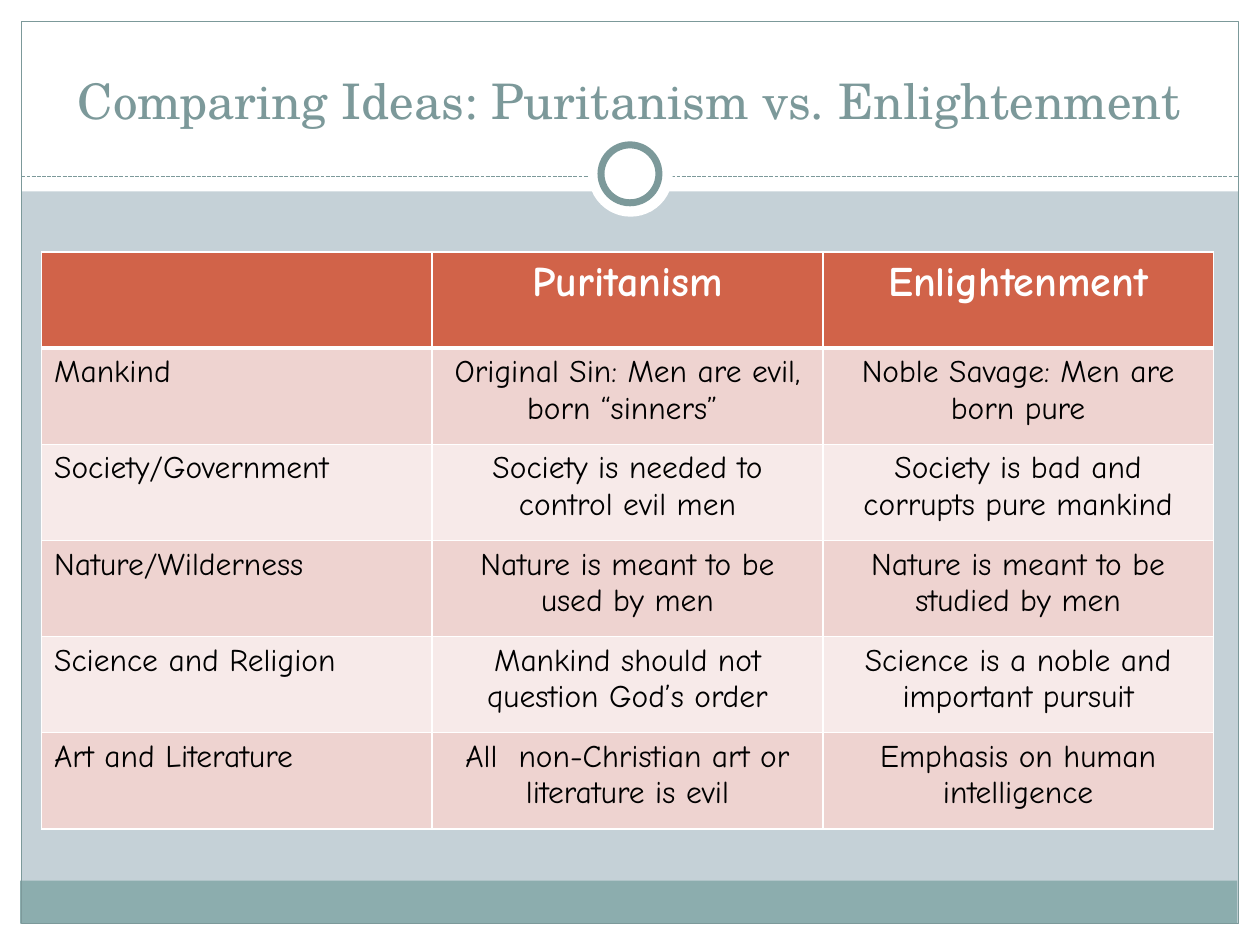
from dataclasses import dataclass

from lxml.etree import SubElement
from pptx import Presentation
from pptx.dml.color import RGBColor
from pptx.enum.dml import MSO_LINE
from pptx.enum.shapes import MSO_CONNECTOR, MSO_SHAPE
from pptx.enum.text import MSO_ANCHOR, PP_ALIGN
from pptx.oxml import parse_xml
from pptx.oxml.ns import nsdecls, qn
from pptx.util import Inches, Pt


@dataclass(frozen=True)
class Theme:
    """Colours, fonts and type sizes of the slide."""

    background: str = "C5D1D7"
    white: str = "FFFFFF"
    black: str = "000000"
    accent: str = "7C999A"
    footer: str = "8CADAE"
    header: str = "D16349"
    bands: tuple = ("EED3D0", "F7EAE9")
    title_font: str = "TeX Gyre Schola"
    table_font: str = "Comic Neue"
    title_size: int = 28
    header_size: int = 24
    body_size: int = 18


THEME = Theme()
TITLE = "Comparing Ideas: Puritanism vs. Enlightenment"
ROWS = [
    ("", "Puritanism", "Enlightenment"),
    ("Mankind", "Original Sin: Men are evil, born “sinners” ", "Noble Savage: Men are born pure"),
    ("Society/Government", "Society is needed to control evil men", "Society is bad and corrupts pure mankind"),
    ("Nature/Wilderness", "Nature is meant to be used by men", "Nature is meant to be studied by men"),
    ("Science and Religion", "Mankind should not question God’s order", "Science is a noble and important pursuit"),
    ("Art and Literature", "All  non-Christian art or literature is evil", "Emphasis on human intelligence"),
]


def rgb(color):
    """Turn a hex string into a colour."""
    return RGBColor.from_string(color)


def add_panel(slide, kind, box, fill=None, line=None, width=0.75):
    """Add a preset shape with an optional fill and outline."""
    shape = slide.shapes.add_shape(kind, *map(Inches, box))
    shape.shadow.inherit = False
    if fill:
        shape.fill.solid()
        shape.fill.fore_color.rgb = rgb(fill)
    else:
        shape.fill.background()
    if line:
        shape.line.color.rgb = rgb(line)
        shape.line.width = Pt(width)
    else:
        shape.line.fill.background()


def add_dashed_rule(slide, left, right, top):
    """Add the dashed horizontal line under the title."""
    rule = slide.shapes.add_connector(
        MSO_CONNECTOR.STRAIGHT, Inches(left), Inches(top), Inches(right), Inches(top)
    )
    rule.line.color.rgb = rgb(THEME.accent)
    rule.line.width = Pt(0.75)
    rule.line.dash_style = MSO_LINE.SQUARE_DOT
    SubElement(rule.element.spPr, qn("a:effectLst"))


def add_frame(slide):
    """Draw the white margins, footer band, outline and ring."""
    rectangle, oval = MSO_SHAPE.RECTANGLE, MSO_SHAPE.OVAL
    margins = [(0, 7.33, 10, 0.17), (0, 0, 10, 1.52), (0, 0, 0.17, 7.5), (9.83, 0, 0.17, 7.5)]
    for box in margins:
        add_panel(slide, rectangle, box, THEME.white)
    add_panel(slide, rectangle, (0.16, 6.99, 9.66, 0.34), THEME.footer)
    add_panel(slide, rectangle, (0.17, 0.17, 9.66, 7.16), line=THEME.accent)
    add_dashed_rule(slide, 0.17, 9.83, 1.4)
    add_panel(slide, oval, (4.67, 1.05, 0.67, 0.67), THEME.white)
    add_panel(slide, oval, (4.77, 1.15, 0.46, 0.46), THEME.white, THEME.accent, 4)


def write_text(text_frame, text, font, size, color, align, bold=False):
    """Write one formatted run into the first paragraph."""
    paragraph = text_frame.paragraphs[0]
    paragraph.alignment = align
    run = paragraph.add_run()
    run.text = text
    run.font.name = font
    run.font.size = Pt(size)
    run.font.bold = bold
    run.font.color.rgb = rgb(color)


def place_title(slide):
    """Position and fill the title placeholder in front of the frame."""
    title = slide.shapes.title
    title.left, title.top = Inches(0.33), Inches(0.25)
    title.width, title.height = Inches(9.33), Inches(0.83)
    title.text_frame.word_wrap = True
    title.text_frame.vertical_anchor = MSO_ANCHOR.BOTTOM
    write_text(title.text_frame, TITLE, THEME.title_font, THEME.title_size, THEME.accent, PP_ALIGN.CENTER)
    title.element.getparent().append(title.element)


def set_borders(cell, top, bottom):
    """Give a cell white borders, with top and bottom widths in points."""
    properties = cell._tc.get_or_add_tcPr()
    for index, (side, width) in enumerate(zip("LRTB", (1, 1, top, bottom))):
        border = parse_xml(
            f'<a:ln{side} {nsdecls("a")} w="{Pt(width)}"><a:solidFill>'
            f'<a:srgbClr val="{THEME.white}"/></a:solidFill></a:ln{side}>'
        )
        properties.insert(index, border)


def add_comparison_table(slide):
    """Add the table with a header row and alternating bands."""
    frame = slide.shapes.add_table(
        len(ROWS), len(ROWS[0]), Inches(0.33), Inches(2), Inches(9.3), Inches(4.58)
    )
    for row_index, row in enumerate(ROWS):
        is_header = row_index == 0
        fill = THEME.header if is_header else THEME.bands[(row_index - 1) % 2]
        size = THEME.header_size if is_header else THEME.body_size
        color = THEME.white if is_header else THEME.black
        for column_index, text in enumerate(row):
            cell = frame.table.cell(row_index, column_index)
            cell.fill.solid()
            cell.fill.fore_color.rgb = rgb(fill)
            set_borders(cell, 3 if row_index == 1 else 1, 3 if is_header else 1)
            if text:
                align = PP_ALIGN.CENTER if column_index else PP_ALIGN.LEFT
                write_text(cell.text_frame, text, THEME.table_font, size, color, align, is_header)


def main():
    """Build the slide and save it."""
    presentation = Presentation()
    presentation.slide_width, presentation.slide_height = Inches(10), Inches(7.5)
    slide = presentation.slides.add_slide(presentation.slide_layouts[5])
    slide.background.fill.solid()
    slide.background.fill.fore_color.rgb = rgb(THEME.background)
    add_frame(slide)
    place_title(slide)
    add_comparison_table(slide)
    presentation.save("out.pptx")


if __name__ == "__main__":
    main()
